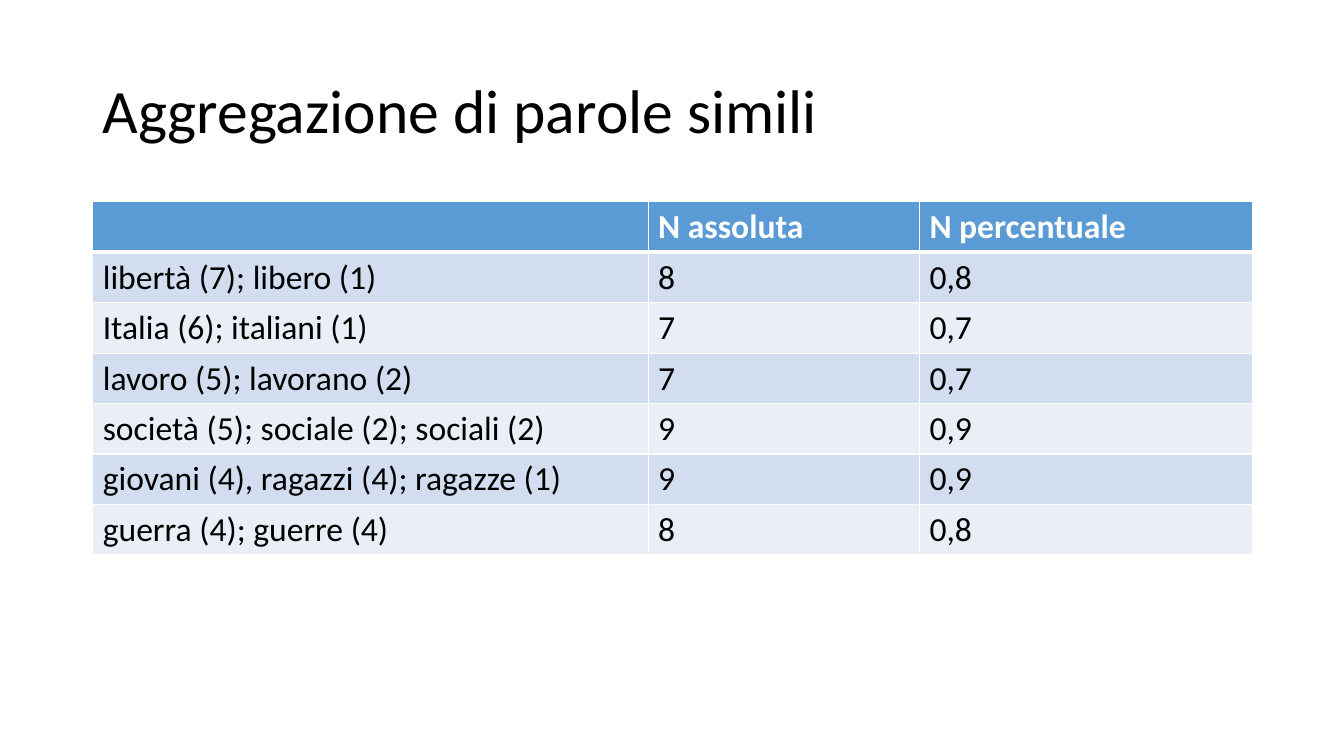
from lxml import etree
from pptx import Presentation
from pptx import util as u
from pptx.dml.color import RGBColor
from pptx.enum import text
from pptx.oxml.ns import qn

BLACK = RGBColor(0x00, 0x00, 0x00)
WHITE = RGBColor(0xFF, 0xFF, 0xFF)
HEADER_BLUE = RGBColor(0x5B, 0x9B, 0xD5)
BANDS = (RGBColor(0xD2, 0xDE, 0xEF), RGBColor(0xEA, 0xEF, 0xF7))

HEADINGS = ("", "N assoluta", "N percentuale")
WORD_GROUPS = (
    ("libertà (7); libero (1)", "8", "0,8"),
    ("Italia (6); italiani (1)", "7", "0,7"),
    ("lavoro (5); lavorano (2)", "7", "0,7"),
    ("società (5); sociale (2); sociali (2)", "9", "0,9"),
    ("giovani (4), ragazzi (4); ragazze (1)", "9", "0,9"),
    ("guerra (4); guerre (4)", "8", "0,8"),
)


class Page:
    """Slide with its text style; lengths are shares of the slide's size."""

    font_name = "Calibri"
    left, width = 0.069, 0.8627

    def __init__(self, deck):
        self.deck = deck
        self.slide = deck.slides.add_slide(deck.slide_layouts[6])

    def across(self, share):
        return round(self.deck.slide_width * share)

    def down(self, share):
        return round(self.deck.slide_height * share)

    def place(self, top, height):
        """Span the content width between the side margins."""
        return (self.across(self.left), self.down(top),
                self.across(self.width), self.down(height))

    def set_text(self, para, words, size, color, bold=False):
        para.text = words
        para.font.name = self.font_name
        para.font.size = u.Pt(size)
        para.font.bold = bold
        para.font.color.rgb = color

    def title(self, words, top, height):
        frame = self.slide.shapes.add_textbox(*self.place(top, height)).text_frame
        frame.word_wrap = True
        frame.vertical_anchor = text.MSO_ANCHOR.MIDDLE
        frame.paragraphs[0].line_spacing = 0.9
        self.set_text(frame.paragraphs[0], words, 44, BLACK)

    def borders(self, cell, top, bottom):
        """Draw white cell edges; top and bottom widths are in points."""
        properties = cell._tc.get_or_add_tcPr()
        edges = (("L", 1), ("R", 1), ("T", top), ("B", bottom))
        for position, (side, width) in enumerate(edges):
            line = etree.Element(qn(f"a:ln{side}"), w=str(u.Pt(width)))
            fill = etree.SubElement(line, qn("a:solidFill"))
            etree.SubElement(fill, qn("a:srgbClr"), val=str(WHITE))
            properties.insert(position, line)

    def table(self, rows, column_shares, top, height):
        """Build the banded table; column shares are parts of its width."""
        table = self.slide.shapes.add_table(
            len(rows), len(column_shares), *self.place(top, height)).table
        for column, share in zip(table.columns, column_shares):
            column.width = self.across(self.width * share)
        for r, row in enumerate(rows):
            header = r == 0
            for c, words in enumerate(row):
                cell = table.cell(r, c)
                cell.fill.solid()
                cell.fill.fore_color.rgb = HEADER_BLUE if header else BANDS[(r - 1) % 2]
                self.borders(cell, top=3 if r == 1 else 1, bottom=3 if header else 1)
                self.set_text(cell.text_frame.paragraphs[0], words, 24,
                              WHITE if header else BLACK, bold=header)


def main():
    deck = Presentation()
    deck.slide_width, deck.slide_height = u.Inches(13.33), u.Inches(7.5)
    page = Page(deck)
    page.title("Aggregazione di parole simili", top=0.053, height=0.193)
    page.table((HEADINGS, *WORD_GROUPS), (0.479, 0.234, 0.287), top=0.267, height=0.467)
    deck.save("out.pptx")


if __name__ == "__main__":
    main()
